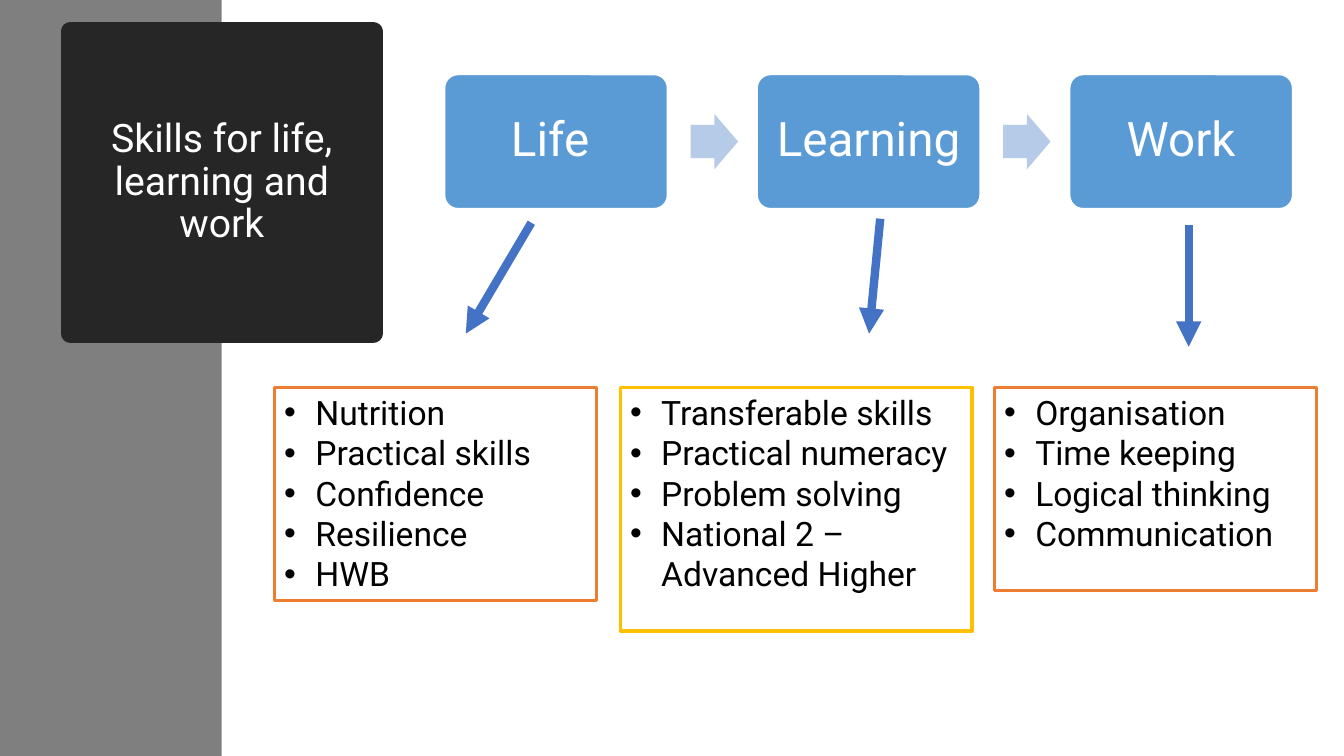
from lxml.etree import SubElement
from pptx import Presentation
from pptx.dml.color import RGBColor
from pptx.enum.shapes import MSO_CONNECTOR, MSO_SHAPE
from pptx.enum.text import MSO_ANCHOR, PP_ALIGN
from pptx.oxml.ns import qn
from pptx.util import Inches, Pt

FONT = "Roboto"
COLORS = {
    "sidebar": "7F7F7F", "title": "262626", "stage": "5B9BD5", "step": "B5CBE7",
    "arrow": "4472C4", "orange": "ED7D31", "gold": "FFC000",
    "white": "FFFFFF", "black": "000000",
}
TITLE = "Skills for life, learning and work"
STAGES = ["Life ", "Learning", "Work"]
STAGE_LEFT, STAGE_TOP, STAGE_PITCH = 4.41, 0.74, 3.1
STAGE_WIDTH, STAGE_HEIGHT = 2.21, 1.33
STEP_OFFSET, STEP_WIDTH, STEP_HEIGHT = 2.44, 0.47, 0.55
ARROWS = [  # start x, start y, end x, end y
    (5.27, 2.21, 4.62, 3.31),
    (8.73, 2.17, 8.62, 3.31),
    (11.79, 2.23, 11.79, 3.44),
]
LIST_TOP = 3.84
SKILL_LISTS = [  # left, width, height, border, skills
    (2.72, 3.2, 2.12, "orange",
     ["Nutrition", "Practical skills", "Confidence", "Resilience", "HWB"]),
    (6.15, 3.49, 2.42, "gold",
     ["Transferable skills", "Practical numeracy", "Problem solving",
      "National 2 – Advanced Higher"]),
    (9.86, 3.2, 2.02, "orange",
     ["Organisation", "Time keeping", "Logical thinking", "Communication"]),
]


def color(name):
    return RGBColor.from_string(COLORS[name])


def add_box(slide, kind, left, top, width, height, fill, line=None, line_width=1):
    shape = slide.shapes.add_shape(
        kind, Inches(left), Inches(top), Inches(width), Inches(height))
    shape.shadow.inherit = False
    shape.fill.solid()
    shape.fill.fore_color.rgb = color(fill)
    if line:
        shape.line.color.rgb = color(line)
        shape.line.width = Pt(line_width)
    else:
        shape.line.fill.background()
    return shape


def style_paragraph(paragraph, text, size, font_color, alignment, spacing):
    paragraph.text = text
    paragraph.alignment = alignment
    paragraph.line_spacing = spacing
    paragraph.font.name = FONT
    paragraph.font.size = Pt(size)
    paragraph.font.color.rgb = color(font_color)


def write_centred(shape, text, size, inset):
    frame = shape.text_frame
    frame.word_wrap = True
    frame.vertical_anchor = MSO_ANCHOR.MIDDLE
    frame.margin_left = frame.margin_right = Inches(inset)
    style_paragraph(frame.paragraphs[0], text, size, "white", PP_ALIGN.CENTER, 0.9)


def write_bullets(shape, items):
    frame = shape.text_frame
    frame.word_wrap = True
    frame.vertical_anchor = MSO_ANCHOR.TOP
    for index, item in enumerate(items):
        paragraph = frame.add_paragraph() if index else frame.paragraphs[0]
        style_paragraph(paragraph, item, 24, "black", PP_ALIGN.LEFT, 1.0)
        properties = paragraph._p.get_or_add_pPr()
        properties.set("marL", str(Inches(0.31)))
        properties.set("indent", str(Inches(-0.31)))
        SubElement(properties, qn("a:buFont")).set("typeface", "Arial")
        SubElement(properties, qn("a:buChar")).set("char", "•")


def add_arrow(slide, *ends):
    connector = slide.shapes.add_connector(
        MSO_CONNECTOR.STRAIGHT, *[Inches(value) for value in ends])
    connector.line.color.rgb = color("arrow")
    connector.line.width = Pt(6)
    SubElement(connector.line._get_or_add_ln(), qn("a:tailEnd")).set("type", "triangle")
    SubElement(connector._element.spPr, qn("a:effectLst"))


def main():
    presentation = Presentation()
    presentation.slide_width = Inches(13.33)
    presentation.slide_height = Inches(7.5)
    slide = presentation.slides.add_slide(presentation.slide_layouts[6])

    add_box(slide, MSO_SHAPE.RECTANGLE, 0, 0, 2.2, 7.5, "sidebar")
    title = add_box(slide, MSO_SHAPE.RECTANGLE, 0.7, 0.31, 3, 3, "title", "title", 13.75)
    SubElement(title.line._get_or_add_ln(), qn("a:round"))
    write_centred(title, TITLE, 28, 0.1)

    for index, name in enumerate(STAGES):
        left = STAGE_LEFT + index * STAGE_PITCH
        stage = add_box(slide, MSO_SHAPE.ROUNDED_RECTANGLE, left, STAGE_TOP,
                        STAGE_WIDTH, STAGE_HEIGHT, "stage", "white")
        stage.adjustments[0] = 0.1
        write_centred(stage, name, 34, 0.15)
        if index < len(STAGES) - 1:
            step_top = STAGE_TOP + (STAGE_HEIGHT - STEP_HEIGHT) / 2
            step = add_box(slide, MSO_SHAPE.RIGHT_ARROW, left + STEP_OFFSET, step_top,
                           STEP_WIDTH, STEP_HEIGHT, "step")
            step.adjustments[0] = 0.6
            step.adjustments[1] = 0.5

    for ends in ARROWS:
        add_arrow(slide, *ends)

    for left, width, height, border, skills in SKILL_LISTS:
        box = add_box(slide, MSO_SHAPE.RECTANGLE, left, LIST_TOP, width, height,
                      "white", border, 2.25)
        write_bullets(box, skills)

    presentation.save("out.pptx")


if __name__ == "__main__":
    main()
